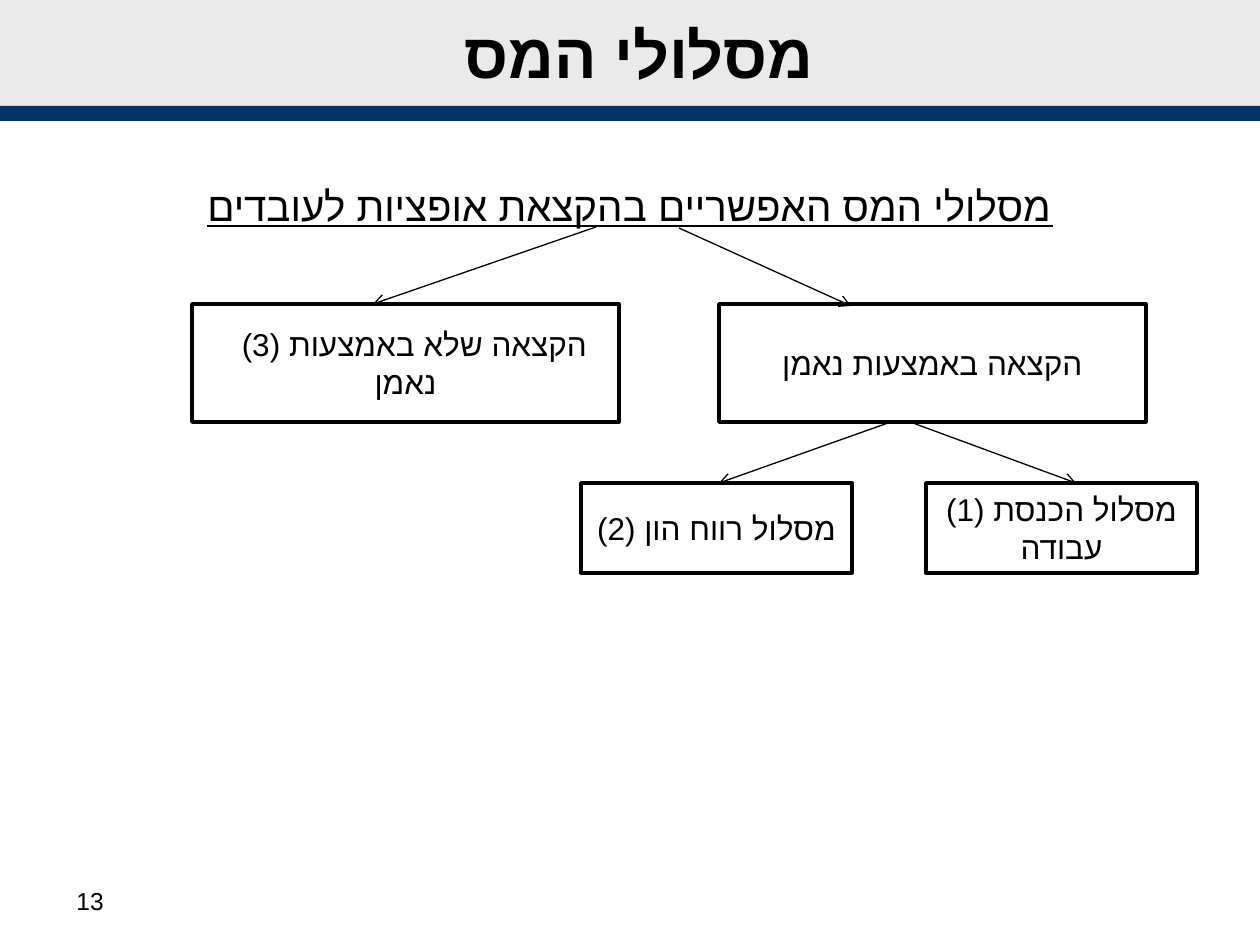
from dataclasses import dataclass

from pptx import Presentation
from pptx.dml.color import RGBColor
from pptx.enum.shapes import MSO_CONNECTOR, MSO_SHAPE
from pptx.enum.text import MSO_ANCHOR, MSO_AUTO_SIZE, PP_ALIGN
from pptx.oxml.ns import qn
from pptx.util import Emu, Pt
from lxml import etree

RECT, STRAIGHT = MSO_SHAPE.RECTANGLE, MSO_CONNECTOR.STRAIGHT
TOP, MIDDLE = MSO_ANCHOR.TOP, MSO_ANCHOR.MIDDLE
LEFT, CENTER = PP_ALIGN.LEFT, PP_ALIGN.CENTER
NO_FIT = MSO_AUTO_SIZE.NONE


@dataclass(frozen=True)
class Theme:
    font: str = "Arial"
    ink: str = "000000"
    paper: str = "FFFFFF"
    header: str = "EAEAEA"
    stripe: str = "003366"
    title: int = 36
    heading: int = 23
    box: int = 18
    number: int = 14
    border: float = 2
    arrow: float = 0.75


THEME = Theme()


def px(n):
    return Emu(round(n * 914400 / 126))


def rgb(value):
    return RGBColor.from_string(value)


def place(sp, left, top, width, height):
    sp.left, sp.top, sp.width, sp.height = map(px, (left, top, width, height))


def write(sp, text, size, align=CENTER, anchor=MIDDLE, rtl=False, indent=0,
          bold=False, underline=False):
    """Fill a shape with one formatted paragraph."""
    tf = sp.text_frame
    tf.word_wrap, tf.auto_size, tf.vertical_anchor = True, NO_FIT, anchor
    p = tf.paragraphs[0]
    p.alignment, p.space_before = align, Pt(0)
    pPr = p._p.get_or_add_pPr()
    pPr.set("marL", "0")
    pPr.set("indent", str(px(indent)))
    pPr.set("rtl", str(int(rtl)))
    etree.SubElement(pPr, qn("a:buNone"))
    r = p.add_run()
    r.text = text
    font = r.font
    font.name, font.size = THEME.font, Pt(size)
    font.bold, font.underline = bold, underline
    font.color.rgb = rgb(THEME.ink)
    # Hebrew takes the complex-script typeface
    etree.SubElement(r._r.get_or_add_rPr(), qn("a:cs"), typeface=THEME.font)


def add_rect(slide, frame, fill, border=None):
    sp = slide.shapes.add_shape(RECT, *map(px, frame))
    sp.shadow.inherit = False
    sp.fill.solid()
    sp.fill.fore_color.rgb = rgb(fill)
    if border:
        sp.line.color.rgb = rgb(THEME.ink)
        sp.line.width = Pt(border)
    else:
        sp.line.fill.background()
    return sp


def add_box(slide, frame, text, indent=0):
    sp = add_rect(slide, frame, THEME.paper, THEME.border)
    write(sp, text, THEME.box, indent=indent)


def add_arrow(slide, start, end):
    line = slide.shapes.add_connector(STRAIGHT, *map(px, start + end))
    line.line.color.rgb = rgb(THEME.ink)
    line.line.width = Pt(THEME.arrow)
    spPr = line.element.spPr
    etree.SubElement(spPr.find(qn("a:ln")), qn("a:tailEnd"), type="arrow")
    etree.SubElement(spPr, qn("a:effectLst"))


def main():
    prs = Presentation()
    prs.slide_width, prs.slide_height = px(1260), px(945)
    slide = prs.slides.add_slide(prs.slide_layouts[1])
    title, body = slide.placeholders

    # Header band and stripe, with the title in front
    add_rect(slide, (0, 0, 1260, 107), THEME.header)
    add_rect(slide, (0, 106, 1260, 15), THEME.stripe)
    title.element.getparent().append(title.element)
    place(title, 25, 0, 1211, 106)
    write(title, "מסלולי המס ", THEME.title, rtl=True, bold=True)

    # Heading of the tree
    place(body, 63, 175, 1134, 669)
    write(body, "מסלולי המס האפשריים בהקצאת אופציות לעובדים", THEME.heading,
          anchor=TOP, rtl=True, underline=True)

    # Allocation routes
    route_top, route_size = 304, (427, 118)
    add_box(slide, (719, route_top, *route_size), "הקצאה באמצעות נאמן")
    add_box(slide, (192, route_top, *route_size),
            "(3) הקצאה שלא באמצעות נאמן", indent=18)

    # Trustee tracks
    track_top, track_size = 483, (271, 90)
    add_box(slide, (926, track_top, *track_size), "(1) מסלול הכנסת עבודה")
    add_box(slide, (581, track_top, *track_size), "(2) מסלול רווח הון")

    # Branches
    for start, end in (
        ((596, 227), (373, route_top)),
        ((679, 228), (851, 306)),
        ((888, 423), (719, track_top)),
        ((910, 422), (1076, track_top)),
    ):
        add_arrow(slide, start, end)

    # Page number
    number = slide.shapes.add_textbox(*map(px, (64, 880, 294, 65)))
    write(number, "13", THEME.number, align=LEFT, anchor=TOP, rtl=True)

    prs.save("out.pptx")


if __name__ == "__main__":
    main()
